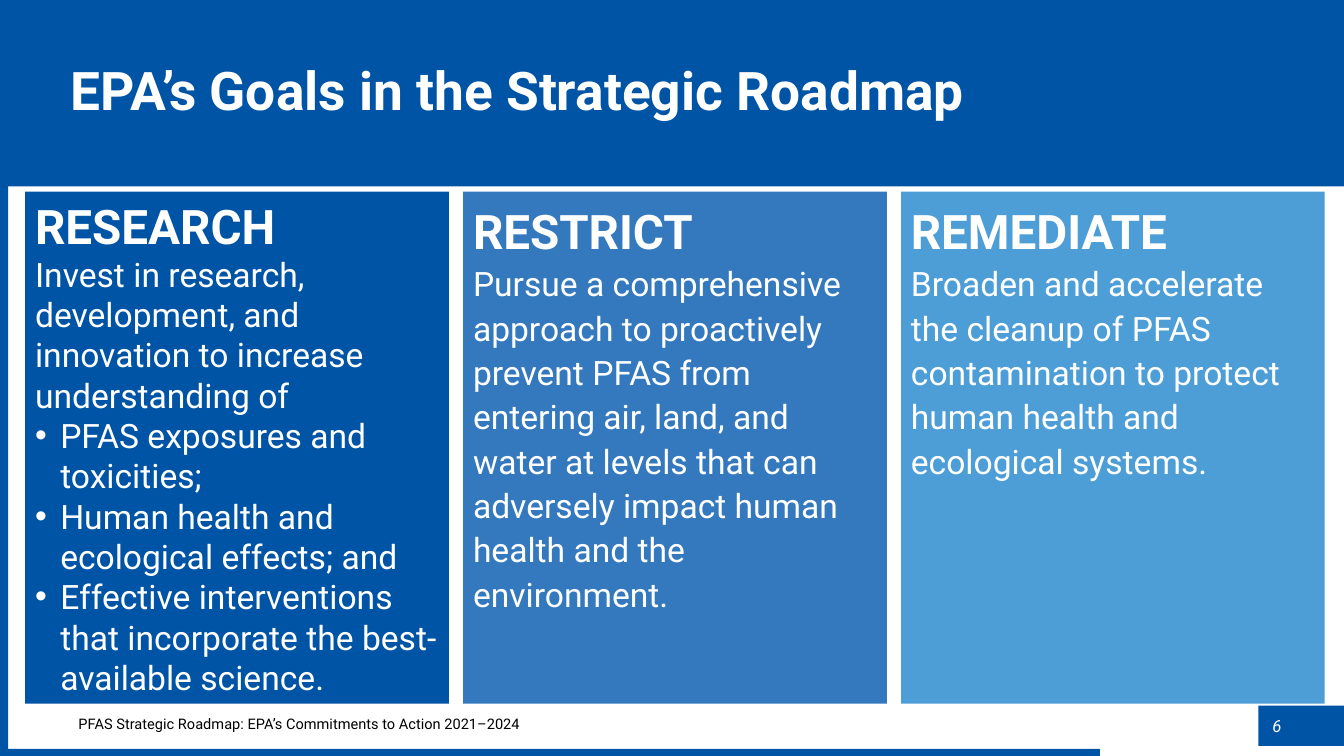
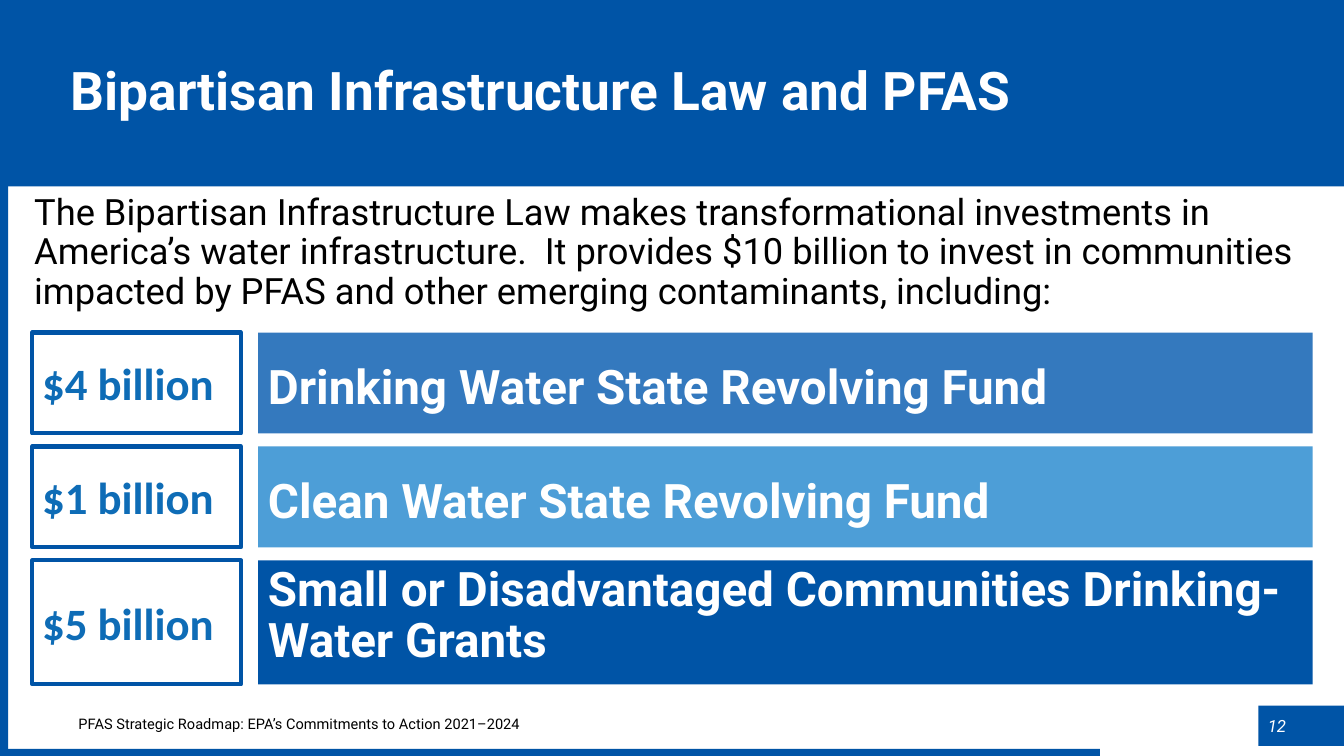
from dataclasses import dataclass

import pptx
import pptx.dml.color
import pptx.enum.shapes
import pptx.enum.text
import pptx.util
from lxml import etree

Inches, Pt = pptx.util.Inches, pptx.util.Pt
ANCHOR = pptx.enum.text.MSO_ANCHOR
ALIGN = pptx.enum.text.PP_ALIGN
RECTANGLE = pptx.enum.shapes.MSO_SHAPE.RECTANGLE

COLORS = {
    "deep": "0054A6",
    "mid": "3479BE",
    "light": "4D9ED7",
    "amount": "0E6CB6",
    "white": "FFFFFF",
    "black": "000000",
}
FONT = "Roboto"
HEADING_SIZE = 34
BODY_SIZE = 24
BULLET_INDENT = 0.25
FOOTER = "PFAS Strategic Roadmap: EPA’s Commitments to Action 2021–2024"


@dataclass
class Box:
    left: float
    top: float
    width: float
    height: float

    def columns(self, weights, gap):
        """Split into side-by-side boxes whose widths follow the weights."""
        unit = (self.width - gap * (len(weights) - 1)) / sum(weights)
        boxes, left = [], self.left
        for weight in weights:
            boxes.append(Box(left, self.top, unit * weight, self.height))
            left += unit * weight + gap
        return boxes

    def rows(self, weights, gap):
        """Split into stacked boxes whose heights follow the weights."""
        turned = Box(self.top, self.left, self.height, self.width)
        return [Box(b.top, b.left, b.height, b.width)
                for b in turned.columns(weights, gap)]


SLIDE = Box(0, 0, 13.33, 7.5)
TITLE_BAND = Box(0, 0, SLIDE.width, 1.85)
LEFT_EDGE = Box(0, 0, 0.08, SLIDE.height)
BOTTOM_EDGE = Box(0, 7.43, 10.91, 0.07)
PAGE_TAB = Box(12.48, 7, 0.85, 0.4)
FOOTER_BOX = Box(0.68, 6.94, 10.08, 0.4)
GOALS_BOX = Box(0.25, 1.9, 12.89, 5.08)
INTRO_BOX = Box(0.24, 1.88, 12.88, 1.4)
FUNDS_BOX = Box(0.32, 3.3, 12.7, 3.49)


def rgb(name):
    return pptx.dml.color.RGBColor.from_string(COLORS[name])


def set_frame(shape, anchor, insets=(0.1, 0.05, 0.1, 0.05)):
    frame = shape.text_frame
    frame.word_wrap = True
    frame.vertical_anchor = anchor
    (frame.margin_left, frame.margin_top,
     frame.margin_right, frame.margin_bottom) = map(Inches, insets)
    return frame


def add_panel(slide, box, fill, outline=None):
    panel = slide.shapes.add_shape(
        RECTANGLE, *map(Inches, (box.left, box.top, box.width, box.height)))
    panel.shadow.inherit = False
    panel.fill.solid()
    panel.fill.fore_color.rgb = rgb(fill)
    if outline:
        panel.line.color.rgb = rgb(outline)
        panel.line.width = Pt(3)
    else:
        panel.line.fill.background()
    return panel


def add_text_box(slide, box):
    return slide.shapes.add_textbox(
        *map(Inches, (box.left, box.top, box.width, box.height)))


def style(paragraph, size, color="white", bold=None, italic=None, font=FONT,
          spacing=None, align=ALIGN.LEFT):
    paragraph.alignment = align
    if spacing:
        paragraph.line_spacing = spacing
    paragraph.font.name = font
    paragraph.font.size = Pt(size)
    paragraph.font.bold = bold
    paragraph.font.italic = italic
    paragraph.font.color.rgb = rgb(color)


def write(frame, text, size, **look):
    paragraph = frame.paragraphs[0]
    paragraph.add_run().text = text
    style(paragraph, size, **look)
    return paragraph


def add_bullet(frame, text):
    paragraph = frame.add_paragraph()
    properties = paragraph._p.get_or_add_pPr()
    properties.set("marL", str(Inches(BULLET_INDENT)))
    properties.set("indent", str(-Inches(BULLET_INDENT)))
    namespace = properties.nsmap["a"]
    etree.SubElement(properties, f"{{{namespace}}}buFont", typeface="Arial")
    etree.SubElement(properties, f"{{{namespace}}}buChar", char="•")
    paragraph.add_run().text = text
    style(paragraph, BODY_SIZE)


def start_slide(deck, title, number):
    """Add a slide with the title band, edges, footer and page tab."""
    slide = deck.slides.add_slide(deck.slide_layouts[6])
    for edge in (LEFT_EDGE, BOTTOM_EDGE):
        add_panel(slide, edge, "deep")

    page = set_frame(add_panel(slide, PAGE_TAB, "deep"), ANCHOR.MIDDLE,
                     (0, 0, 0.48, 0))
    write(page, str(number), 12, italic=True, align=ALIGN.CENTER)

    heading = set_frame(add_panel(slide, TITLE_BAND, "deep"), ANCHOR.MIDDLE,
                        (0.7, 0.05, 0.7, 0.05))
    write(heading, title, 38, bold=True, spacing=0.9)

    footer = set_frame(add_text_box(slide, FOOTER_BOX), ANCHOR.MIDDLE,
                       (0.1, 0.2, 0.1, 0.05))
    line = write(footer, FOOTER, 18, color="black")
    line.runs[0].font._element.set("baseline", "30000")
    return slide


def add_goal(slide, box, fill, name, aim, points, spacing):
    frame = set_frame(add_panel(slide, box, fill), ANCHOR.TOP)
    paragraph = frame.paragraphs[0]
    heading = paragraph.add_run()
    heading.text = name
    heading.font.size = Pt(HEADING_SIZE)
    heading.font.bold = True
    paragraph.add_line_break()
    paragraph.add_run().text = aim
    style(paragraph, BODY_SIZE, spacing=spacing)
    for point in points:
        add_bullet(frame, point)


def add_goals_slide(deck):
    goals = [
        ("deep", "RESEARCH",
         "Invest in research, development, and innovation to increase "
         "understanding of",
         ["PFAS exposures and toxicities;",
          "Human health and ecological effects; and",
          "Effective interventions that incorporate the best-available "
          "science."], None),
        ("mid", "RESTRICT",
         "Pursue a comprehensive approach to proactively prevent PFAS from "
         "entering air, land, and water at levels that can adversely impact "
         "human health and the environment.", [], 1.1),
        ("light", "REMEDIATE",
         "Broaden and accelerate the cleanup of PFAS contamination to protect "
         "human health and ecological systems.", [], 1.1),
    ]
    slide = start_slide(deck, "EPA’s Goals in the Strategic Roadmap", 6)
    for box, goal in zip(GOALS_BOX.columns([1, 1, 1], 0.14), goals):
        add_goal(slide, box, *goal)


def add_fund(slide, box, fill, amount, fund, anchor, spacing):
    amount_box, fund_box = box.columns([2.07, 10.46], 0.17)
    amount_frame = set_frame(
        add_panel(slide, amount_box, "white", outline="deep"), ANCHOR.MIDDLE)
    write(amount_frame, amount, 32, color="amount", bold=True, font="Calibri")
    fund_frame = set_frame(add_panel(slide, fund_box, fill), anchor)
    write(fund_frame, fund, HEADING_SIZE, bold=True, spacing=spacing)


def add_funding_slide(deck):
    funds = [
        ("mid", "$4 billion", "Drinking Water State Revolving Fund",
         ANCHOR.MIDDLE, 1.1),
        ("light", "$1 billion", "Clean Water State Revolving Fund",
         ANCHOR.MIDDLE, 1.1),
        ("deep", "$5 billion",
         "Small or Disadvantaged Communities Drinking-Water Grants",
         ANCHOR.TOP, 0.9),
    ]
    slide = start_slide(deck, "Bipartisan Infrastructure Law and PFAS", 12)
    intro = set_frame(add_text_box(slide, INTRO_BOX), ANCHOR.TOP)
    write(intro,
          "The Bipartisan Infrastructure Law makes transformational "
          "investments in America’s water infrastructure.  It provides "
          "$10 billion to invest in communities impacted by PFAS and other "
          "emerging contaminants, including:",
          25.9, color="black", spacing=0.9)
    for box, fund in zip(FUNDS_BOX.rows([1, 1, 1.23], 0.13), funds):
        add_fund(slide, box, *fund)


def main():
    deck = pptx.Presentation()
    deck.slide_width = Inches(SLIDE.width)
    deck.slide_height = Inches(SLIDE.height)
    add_goals_slide(deck)
    add_funding_slide(deck)
    deck.save("out.pptx")


if __name__ == "__main__":
    main()
